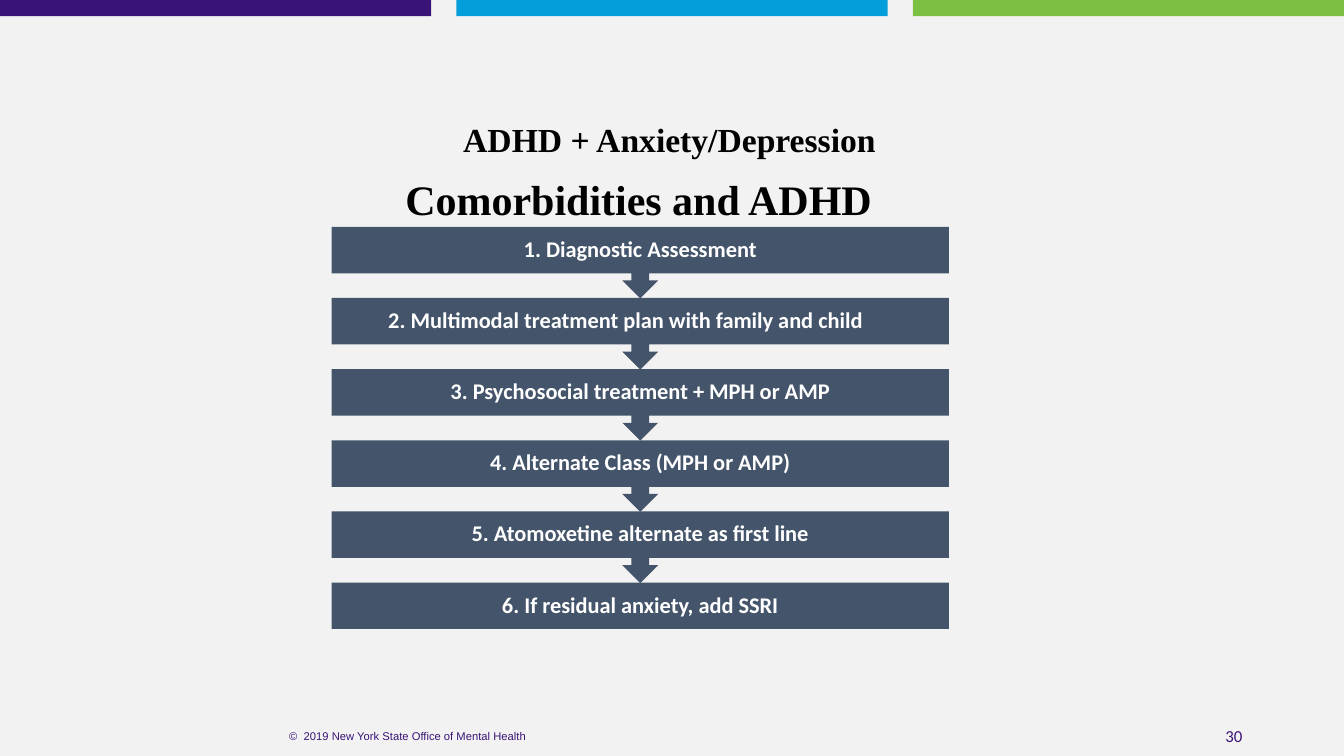
import pptx
import pptx.util
import pptx.dml.color
import pptx.enum.shapes
import pptx.enum.text

Inches, Pt = pptx.util.Inches, pptx.util.Pt
Shape = pptx.enum.shapes.MSO_SHAPE
Align = pptx.enum.text.PP_ALIGN
Anchor = pptx.enum.text.MSO_ANCHOR

WIDE, HIGH = 13.33, 7.5
COLORS = {"page": "F2F2F2", "purple": "391378", "blue": "049FDA",
          "green": "7BBF43", "slate": "44546A", "white": "FFFFFF", "black": "000000"}
STRIPES = ["purple", "blue", "green"]
STEPS = [
    "1. Diagnostic Assessment",
    "2. Multimodal treatment plan with family and child\t",
    "3. Psychosocial treatment + MPH or AMP",
    "4. Alternate Class (MPH or AMP)",
    "5. Atomoxetine alternate as first line",
    "6. If residual anxiety, add SSRI",
]
TITLE = "ADHD + Anxiety/Depression"
HEADING = "Comorbidities and ADHD"
FOOTER = "©  2019 New York State Office of Mental Health"
PAGE = "30"

GAP, BAR = 0.25, 0.16
LEFT, TOP, SPAN = 3.29, 2.25, 6.12
PITCH, TALL, BOX = 0.706, 0.71, 0.46
SERIF = "Times New Roman"

deck = pptx.Presentation()
deck.slide_width, deck.slide_height = Inches(WIDE), Inches(HIGH)
slide = deck.slides.add_slide(deck.slide_layouts[6])


def tint(name):
    return pptx.dml.color.RGBColor.from_string(COLORS[name])


def block(kind, place, color):
    shape = slide.shapes.add_shape(kind, *map(Inches, place))
    shape.shadow.inherit = False
    shape.fill.solid()
    shape.fill.fore_color.rgb = tint(color)
    shape.line.fill.background()
    return shape


def label(place):
    return slide.shapes.add_textbox(*map(Inches, place))


def write(shape, text, size, font="Calibri", color="purple", bold=False,
          align=Align.CENTER, anchor=Anchor.MIDDLE, inset=(0.1, 0.05, 0.1, 0.05), lead=1.0):
    frame = shape.text_frame
    frame.word_wrap = True
    frame.vertical_anchor = anchor
    (frame.margin_left, frame.margin_top,
     frame.margin_right, frame.margin_bottom) = map(Inches, inset)
    para = frame.paragraphs[0]
    para.alignment, para.line_spacing = align, lead
    run = para.add_run()
    run.text = text
    run.font.size, run.font.name, run.font.bold = Pt(size), font, bold
    run.font.color.rgb = tint(color)


slide.background.fill.solid()
slide.background.fill.fore_color.rgb = tint("page")

stripe = (WIDE - 2 * GAP) / len(STRIPES)
for i, color in enumerate(STRIPES):
    block(Shape.RECTANGLE, (i * (stripe + GAP), 0, stripe, BAR), color)

write(label((9.42, 7.1, 3, 0.4)), PAGE, 12, align=Align.RIGHT)
write(label((1.81, 7.1, 4.47, 0.4)), FOOTER, 8, font="Arial")

for i, step in enumerate(STEPS):
    last = i == len(STEPS) - 1
    kind = Shape.RECTANGLE if last else Shape.DOWN_ARROW_CALLOUT
    box = block(kind, (LEFT, TOP + i * PITCH, SPAN, BOX if last else TALL), "slate")
    write(box, step, 16, color="white", bold=True, inset=(0.12,) * 4, lead=0.9)

write(label((0.89, 1.01, 11.5, 0.78)), TITLE, 24, font=SERIF, color="black", bold=True, lead=0.9)
write(label((3.04, 1.32, 6.38, 0.94)), HEADING, 30, font=SERIF, color="black", bold=True,
      anchor=Anchor.BOTTOM, inset=(0.28, 0.04, 0.07, 0.04))

deck.save("out.pptx")
